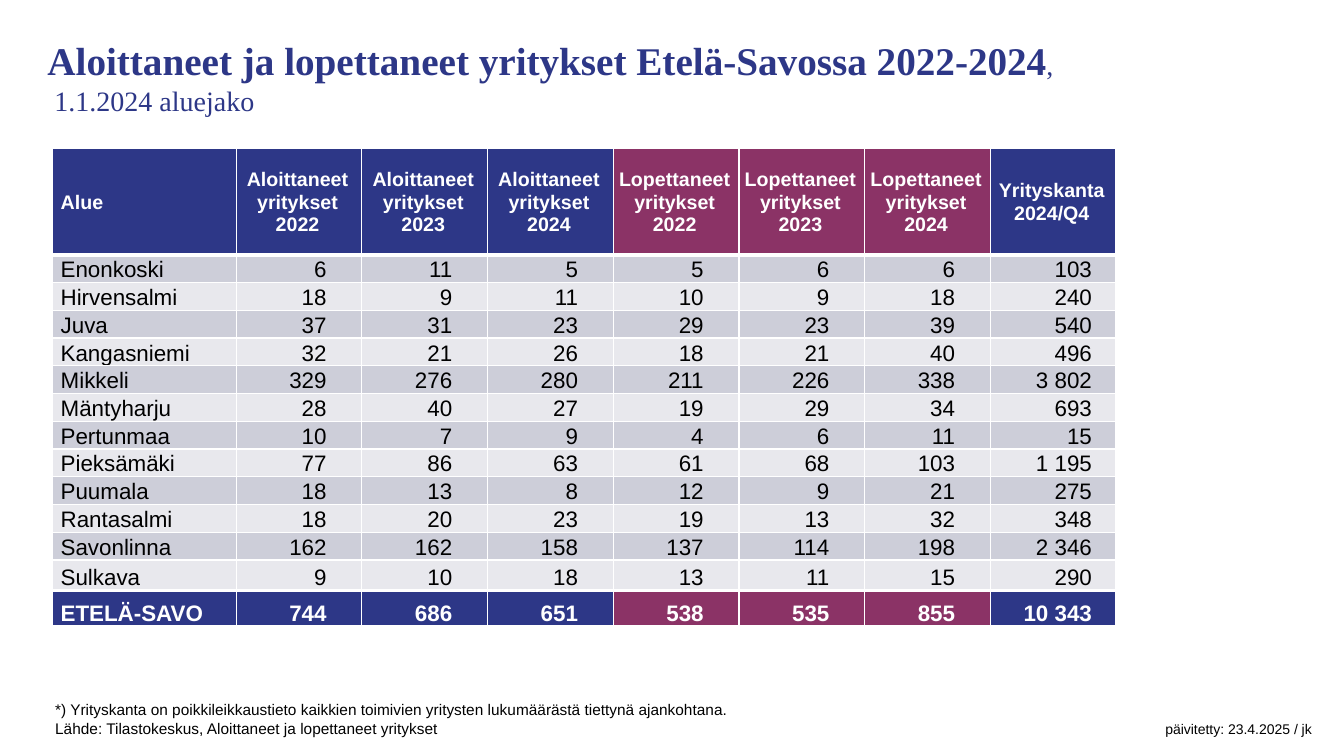
from lxml import etree
from pptx import Presentation
from pptx.dml.color import RGBColor
from pptx.enum.text import MSO_ANCHOR, PP_ALIGN
from pptx.oxml.ns import qn
from pptx.util import Cm, Pt

LEFT, CENTER, RIGHT = PP_ALIGN.LEFT, PP_ALIGN.CENTER, PP_ALIGN.RIGHT
TOP, MIDDLE, BOTTOM = MSO_ANCHOR.TOP, MSO_ANCHOR.MIDDLE, MSO_ANCHOR.BOTTOM

COLORS = {"blue": "2D3787", "plum": "8B3366", "band_dark": "CDCED9",
          "band_light": "E8E8ED", "white": "FFFFFF", "black": "000000"}
SANS, SERIF = "Arial", "Times New Roman"

HEADERS = (["Alue"]
           + [f"{kind} yritykset {year}" for kind in ("Aloittaneet", "Lopettaneet")
              for year in (2022, 2023, 2024)]
           + ["Yrityskanta 2024/Q4"])
REGIONS = [
    ("Enonkoski", 6, 11, 5, 5, 6, 6, 103),
    ("Hirvensalmi", 18, 9, 11, 10, 9, 18, 240),
    ("Juva", 37, 31, 23, 29, 23, 39, 540),
    ("Kangasniemi", 32, 21, 26, 18, 21, 40, 496),
    ("Mikkeli", 329, 276, 280, 211, 226, 338, 3802),
    ("Mäntyharju", 28, 40, 27, 19, 29, 34, 693),
    ("Pertunmaa", 10, 7, 9, 4, 6, 11, 15),
    ("Pieksämäki", 77, 86, 63, 61, 68, 103, 1195),
    ("Puumala", 18, 13, 8, 12, 9, 21, 275),
    ("Rantasalmi", 18, 20, 23, 19, 13, 32, 348),
    ("Savonlinna", 162, 162, 158, 137, 114, 198, 2346),
    ("Sulkava", 9, 10, 18, 13, 11, 15, 290),
]
TOTAL = ("ETELÄ-SAVO", 744, 686, 651, 538, 535, 855, 10343)
CLOSED_COLS = (4, 5, 6)


def add_run(p, text, size, font=SANS, color="black", bold=False):
    r = p.add_run()
    r.text = text
    r.font.size, r.font.name, r.font.bold = Pt(size), font, bold
    r.font.color.rgb = RGBColor.from_string(COLORS[color])


def place(sp, left, top, width, height, anchor):
    sp.left, sp.top, sp.width, sp.height = Cm(left), Cm(top), Cm(width), Cm(height)
    sp.text_frame.word_wrap = True
    sp.text_frame.vertical_anchor = anchor


def add_title(s, left, top, width, height):
    sp = s.shapes.title
    place(sp, left, top, width, height, MIDDLE)
    p = sp.text_frame.paragraphs[0]
    p.alignment = LEFT
    add_run(p, "Aloittaneet ja lopettaneet yritykset Etelä-Savossa 2022-2024",
            28, SERIF, "blue", True)
    add_run(p, ",", 20, SERIF, "blue")
    p.add_line_break()
    add_run(p, " 1.1.2024 aluejako", 20, SERIF, "blue")


def set_borders(cell, **widths):
    """Draw white cell borders; keys are L, R, T and B, values are points."""
    tc_pr = cell._tc.get_or_add_tcPr()
    for side, width in widths.items():
        ln = etree.SubElement(tc_pr, qn(f"a:ln{side}"), w=str(Pt(width)))
        fill = etree.SubElement(ln, qn("a:solidFill"))
        etree.SubElement(fill, qn("a:srgbClr"), val=COLORS["white"])


def add_company_table(s, left, top, width, height):
    rows = [HEADERS, *REGIONS, TOTAL]
    last_row, last_col = len(rows) - 1, len(HEADERS) - 1
    table = s.shapes.add_table(len(rows), len(HEADERS), Cm(left), Cm(top),
                               Cm(width), Cm(height)).table
    table.horz_banding = False
    name_width, header_height, total_height, region_height = 4.62, 2.68, 0.89, 0.7
    for col, column in enumerate(table.columns):
        column.width = Cm((width - name_width) / last_col if col else name_width)
    for row in table.rows:
        row.height = Cm(region_height)
    table.rows[0].height = Cm(header_height)
    table.rows[last_row].height = Cm(total_height)
    # The last region takes what the other rows leave
    table.rows[last_row - 1].height = Cm(
        height - header_height - total_height - region_height * (len(REGIONS) - 1))

    for row, values in enumerate(rows):
        header, strong = row == 0, row in (0, last_row)
        for col, value in enumerate(values):
            cell = table.cell(row, col)
            set_borders(cell, L=1, R=1, T=3 if row in (1, last_row) else 1,
                        B=3 if row in (0, last_row - 1) else 1)
            if strong:
                fill = "plum" if col in CLOSED_COLS else "blue"
            else:
                fill = "band_dark" if row % 2 else "band_light"
            cell.fill.solid()
            cell.fill.fore_color.rgb = RGBColor.from_string(COLORS[fill])
            if col == 0:
                align, margin_right = LEFT, 0.03
            elif header:
                align, margin_right = CENTER, 0.1
            else:
                align, margin_right = RIGHT, 0.61 if col == last_col else 0.89
            cell.margin_left = Cm(0.03 if col else 0.2)
            cell.margin_right = Cm(margin_right)
            cell.margin_top, cell.margin_bottom = Cm(0.03), 0
            cell.vertical_anchor = MIDDLE if header else BOTTOM
            p = cell.text_frame.paragraphs[0]
            p.alignment = align
            text = value if isinstance(value, str) else f"{value:,}".replace(",", " ")
            add_run(p, text, 14 if header else 16,
                    color="white" if strong else "black", bold=strong)


def add_footer(s, left, top, width, height):
    sp = s.shapes.add_textbox(0, 0, 0, 0)
    place(sp, left, top, width, height, TOP)
    tf = sp.text_frame
    add_run(tf.paragraphs[0], "*) Yrityskanta on poikkileikkaustieto kaikkien toimivien "
            "yritysten lukumäärästä tiettynä ajankohtana.", 11)
    p = tf.add_paragraph()
    tabs = etree.SubElement(p._p.get_or_add_pPr(), qn("a:tabLst"))
    etree.SubElement(tabs, qn("a:tab"), pos=str(Cm(width - 0.94)), algn="r")
    add_run(p, "Lähde: Tilastokeskus, Aloittaneet ja lopettaneet yritykset\t", 11)
    add_run(p, "päivitetty: 23.4.2025 / jk", 10)


def main():
    prs = Presentation()
    prs.slide_width, prs.slide_height = Cm(33.87), Cm(19.05)
    s = prs.slides.add_slide(prs.slide_layouts[5])
    add_title(s, 0.94, 0.74, 32.61, 2.39)
    add_company_table(s, 1.33, 3.74, 26.8, 12.04)
    add_footer(s, 1.14, 17.53, 32.61, 1.52)
    prs.save("out.pptx")


if __name__ == "__main__":
    main()
